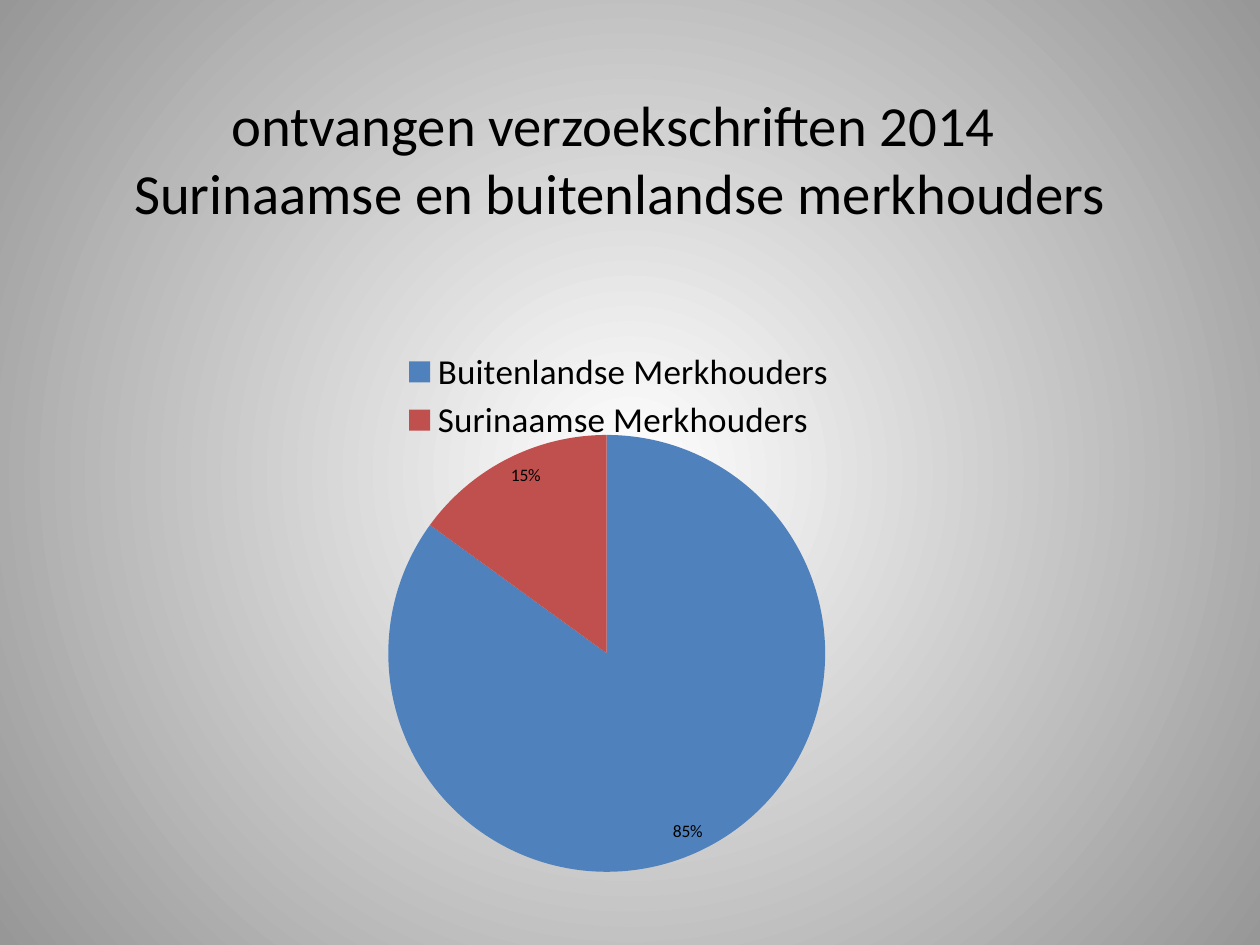
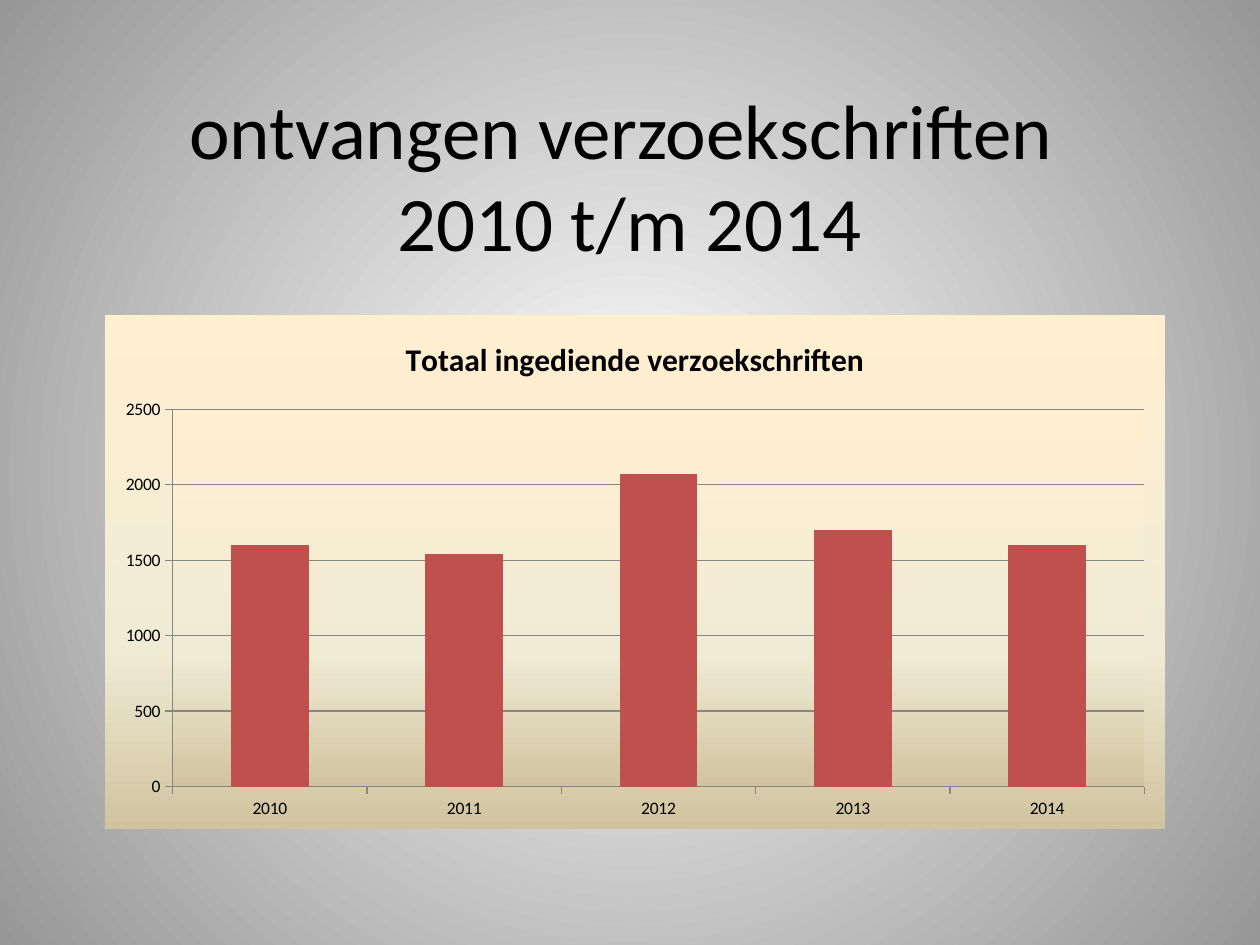
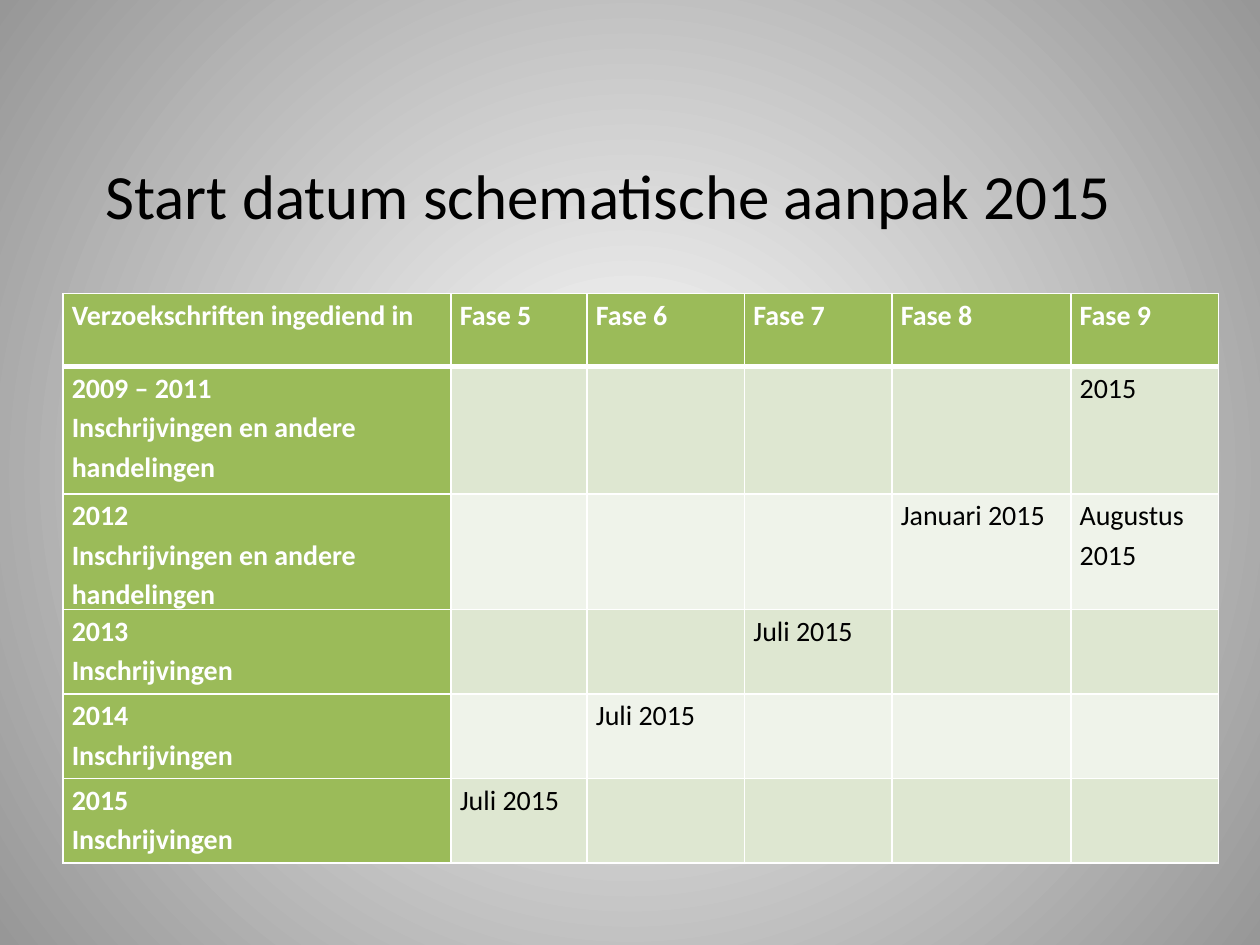
from lxml.etree import SubElement
from pptx import Presentation
from pptx.chart.data import CategoryChartData
from pptx.dml.color import RGBColor
from pptx.enum.chart import XL_CHART_TYPE as ChartType
from pptx.enum.chart import XL_LABEL_POSITION as LabelPosition
from pptx.enum.chart import XL_LEGEND_POSITION as LegendPosition
from pptx.enum.chart import XL_TICK_MARK as TickMark
from pptx.enum.text import MSO_ANCHOR, PP_ALIGN
from pptx.oxml import parse_xml
from pptx.oxml.ns import nsdecls, qn
from pptx.util import Inches, Pt

BLACK = RGBColor(0x00, 0x00, 0x00)
WHITE = RGBColor(0xFF, 0xFF, 0xFF)
BLUE = RGBColor(0x4F, 0x81, 0xBD)
RED = RGBColor(0xC0, 0x50, 0x4D)
GREEN = RGBColor(0x9B, 0xBB, 0x59)
GREEN_MID = RGBColor(0xDE, 0xE7, 0xD1)
GREEN_PALE = RGBColor(0xEF, 0xF3, 0xEA)
GREY = RGBColor(0x86, 0x86, 0x86)
DARK_GREY = RGBColor(0x97, 0x97, 0x97)
CREAM = RGBColor(0xFF, 0xEF, 0xD1)
IVORY = RGBColor(0xF0, 0xEB, 0xD5)
SAND = RGBColor(0xD1, 0xC3, 0x9F)

RADIAL = '<a:path path="circle"><a:fillToRect l="50000" t="50000" r="50000" b="50000"/></a:path>'
DOWNWARD = '<a:lin ang="5400000" scaled="0"/>'


def style_font(font, size, color=BLACK, bold=False):
    for attribute, value in {"name": "Calibri", "size": Pt(size), "bold": bold}.items():
        setattr(font, attribute, value)
    font.color.rgb = color


def gradient(stops, direction):
    marks = "".join(
        f'<a:gs pos="{percent * 1000}"><a:srgbClr val="{color}"/></a:gs>' for percent, color in stops
    )
    return parse_xml(
        f'<a:gradFill {nsdecls("a")} rotWithShape="1"><a:gsLst>{marks}</a:gsLst>{direction}</a:gradFill>'
    )


presentation = Presentation()
presentation.slide_width = Inches(10)
presentation.slide_height = Inches(7.5)

titles = [
    ("ontvangen verzoekschriften 2014 \vSurinaamse en buitenlandse merkhouders", 32.4, (0.67, 0.67, 8.5, 1.17)),
    ("ontvangen verzoekschriften \v2010 t/m 2014", 44, (0.75, 0.58, 8.5, 1.61)),
    ("Start datum schematische aanpak 2015", 36, (0.58, 0.92, 8.5, 1.25)),
]
slides = []
for wording, size, place in titles:
    slide = presentation.slides.add_slide(presentation.slide_layouts[6])
    slide.background.fill.solid()
    backdrop = slide.element.find(".//" + qn("p:bgPr"))
    backdrop.replace(backdrop[0], gradient([(0, WHITE), (100, DARK_GREY)], RADIAL))
    heading = slide.shapes.add_textbox(*map(Inches, place)).text_frame
    heading.word_wrap = True
    heading.vertical_anchor = MSO_ANCHOR.MIDDLE
    heading.text = wording
    heading.paragraphs[0].alignment = PP_ALIGN.CENTER
    for run in heading.paragraphs[0].runs:
        style_font(run.font, size)
    slides.append(slide)
holders_slide, yearly_slide, planning_slide = slides

holders = CategoryChartData()
holders.categories = ["Buitenlandse Merkhouders", "Surinaamse Merkhouders"]
holders.add_series("Series 1", [85, 15])
holders_chart = holders_slide.shapes.add_chart(
    ChartType.PIE, *map(Inches, (1.67, 2.17, 6.42, 4.75)), holders
).chart
style_font(holders_chart.font, 10)
holders_chart.has_title = False
holders_chart.has_legend = True
holders_chart.legend.position = LegendPosition.TOP
holders_chart.legend.include_in_layout = False
style_font(holders_chart.legend.font, 20)
pie = holders_chart.plots[0]
pie.vary_by_categories = True
for index, color in enumerate([BLUE, RED]):
    slice_fill = pie.series[0].points[index].format.fill
    slice_fill.solid()
    slice_fill.fore_color.rgb = color
pie.has_data_labels = True
shares = pie.data_labels
for attribute, value in {
    "show_percentage": True,
    "show_value": False,
    "number_format": "0%",
    "number_format_is_linked": False,
    "position": LabelPosition.INSIDE_END,
}.items():
    setattr(shares, attribute, value)
style_font(shares.font, 10)

plot_layout = {"layoutTarget": "inner", "xMode": "edge", "yMode": "edge", "x": 0, "y": 0.27, "w": 0.98, "h": 0.73}
legend_layout = {"xMode": "edge", "yMode": "edge", "x": 0.23, "y": 0.12, "w": 0.55, "h": 0.17}
for tag, settings in (("c:plotArea", plot_layout), ("c:legend", legend_layout)):
    area = holders_chart.element.find(".//" + qn(tag))
    for previous in area.findall(qn("c:layout")):
        area.remove(previous)
    layout = parse_xml(f'<c:layout {nsdecls("c")}/>')
    manual = SubElement(layout, qn("c:manualLayout"))
    for key, value in settings.items():
        SubElement(manual, qn(f"c:{key}")).set("val", str(value))
    area.insert(0 if tag == "c:plotArea" else 1, layout)

requests = CategoryChartData()
requests.categories = ["2010", "2011", "2012", "2013", "2014"]
requests.add_series("Series 1", [1600, 1540, 2070, 1700, 1600])
requests_chart = yearly_slide.shapes.add_chart(
    ChartType.COLUMN_STACKED, *map(Inches, (0.83, 2.5, 8.42, 4.08)), requests
).chart
style_font(requests_chart.font, 10)
requests_chart.has_legend = False
requests_chart.has_title = True
requests_title = requests_chart.chart_title
requests_title.include_in_layout = False
requests_title.text_frame.text = "Totaal ingediende verzoekschriften"
style_font(requests_title.text_frame.paragraphs[0].runs[0].font, 18, bold=True)
columns = requests_chart.plots[0]
for attribute, value in {"gap_width": 150, "overlap": 100, "vary_by_categories": False}.items():
    setattr(columns, attribute, value)
column_fill = columns.series[0].format.fill
column_fill.solid()
column_fill.fore_color.rgb = RED
value_axis = requests_chart.value_axis
value_axis.maximum_scale = 2500
value_axis.minimum_scale = 0
value_axis.major_unit = 500
value_axis.has_major_gridlines = True
for axis in (requests_chart.category_axis, value_axis):
    axis.major_tick_mark = TickMark.OUTSIDE
    style_font(axis.tick_labels.font, 10)
for ruled in (requests_chart.category_axis, value_axis, value_axis.major_gridlines):
    ruled.format.line.color.rgb = GREY
    ruled.format.line.width = Pt(0.75)

plot_surface, chart_surface = (parse_xml(f'<c:spPr {nsdecls("c", "a")}/>') for _ in range(2))
for surface in (plot_surface, chart_surface):
    surface.append(gradient([(0, CREAM), (65, IVORY), (100, SAND)], DOWNWARD))
    SubElement(SubElement(surface, qn("a:ln")), qn("a:noFill"))
requests_chart.element.find(".//" + qn("c:plotArea")).append(plot_surface)
requests_chart.element.find(qn("c:chart")).addnext(chart_surface)

planning = [
    ["Verzoekschriften ingediend in", "Fase 5", "Fase 6", "Fase 7", "Fase 8", "Fase 9"],
    ["2009 – 2011\nInschrijvingen en andere handelingen", "", "", "", "", "2015"],
    ["2012\nInschrijvingen en andere handelingen", "", "", "", "Januari 2015", "Augustus 2015"],
    ["2013\nInschrijvingen", "", "", "Juli 2015", "", ""],
    ["2014\nInschrijvingen", "", "Juli 2015", "", "", ""],
    ["2015\nInschrijvingen", "Juli 2015", "", "", "", ""],
]
column_widths = [3.08, 1.08, 1.25, 1.17, 1.42, 1.17]
row_heights = [0.58, 1.01, 0.75, 0.67, 0.67, 0.67]
schedule = planning_slide.shapes.add_table(
    len(row_heights), len(column_widths), *map(Inches, (0.5, 2.33, 9.17, 4.35))
).table
for column, width in zip(schedule.columns, column_widths):
    column.width = Inches(width)
for row, height in zip(schedule.rows, row_heights):
    row.height = Inches(height)
cell_margins = {
    "margin_left": Inches(0.07),
    "margin_top": 0,
    "margin_right": Inches(0.07),
    "margin_bottom": 0,
}
for row_index, entries in enumerate(planning):
    for column_index, entry in enumerate(entries):
        cell = schedule.cell(row_index, column_index)
        is_header = row_index == 0 or column_index == 0
        band = GREEN_MID if row_index % 2 else GREEN_PALE
        properties = cell._tc.get_or_add_tcPr()
        for side in ("lnL", "lnR", "lnT", "lnB"):
            heavy = (row_index, side) in ((0, "lnB"), (1, "lnT"))
            border = SubElement(properties, qn(f"a:{side}"), w=str(Pt(3 if heavy else 1)))
            SubElement(SubElement(border, qn("a:solidFill")), qn("a:srgbClr"), val=str(WHITE))
        cell.fill.solid()
        cell.fill.fore_color.rgb = GREEN if is_header else band
        if entry:
            for attribute, value in cell_margins.items():
                setattr(cell, attribute, value)
            cell.text = entry
            for paragraph in cell.text_frame.paragraphs:
                paragraph.line_spacing = 1.15
                style_font(paragraph.runs[0].font, 16, WHITE if is_header else BLACK, is_header)

presentation.save("out.pptx")
